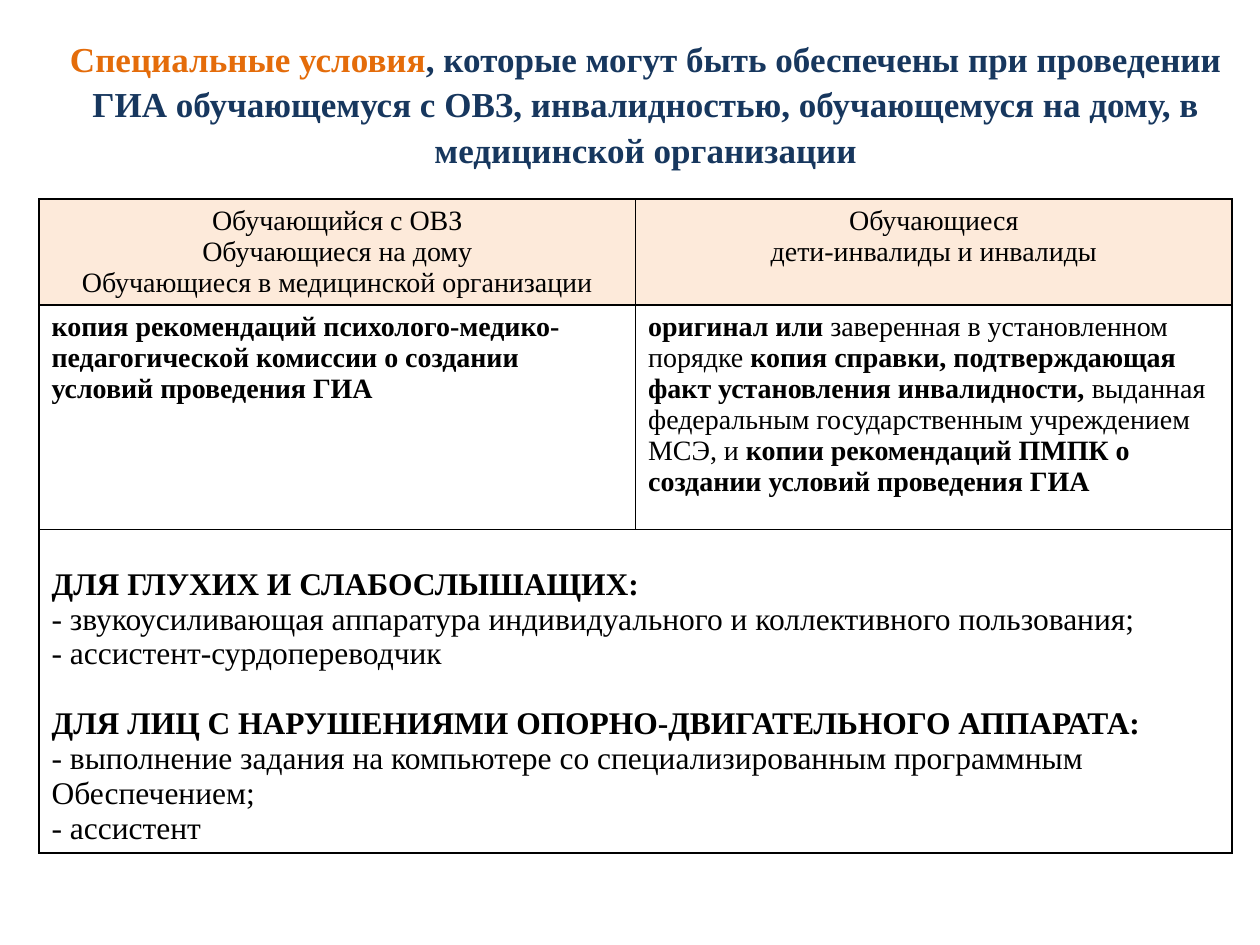
from lxml.etree import SubElement
from pptx import Presentation
from pptx.dml.color import RGBColor
from pptx.enum.text import MSO_ANCHOR, PP_ALIGN
from pptx.oxml.ns import qn
from pptx.util import Inches, Pt

FONT = "Times New Roman"
BLACK, ORANGE, NAVY, PEACH = "000000", "E46C0A", "17375E", "FDEADA"

# Content: a paragraph is a list of (text, bold) runs
TITLE = [
    ("Специальные условия", ORANGE),
    (", которые могут быть обеспечены при проведении ГИА обучающемуся с ОВЗ, "
     "инвалидностью, обучающемуся на дому, в медицинской организации", NAVY),
]
HEADERS = [
    ["Обучающийся с ОВЗ", "Обучающиеся на дому",
     "Обучающиеся в медицинской организации"],
    ["Обучающиеся", "дети-инвалиды и инвалиды"],
]
DOCUMENTS = [
    [("копия рекомендаций психолого-медико-педагогической комиссии "
      "о создании условий проведения ГИА", True)],
    [("оригинал или", True),
     (" заверенная в установленном порядке ", False),
     ("копия справки, подтверждающая факт установления инвалидности, ", True),
     ("выданная федеральным государственным учреждением МСЭ, и ", False),
     ("копии рекомендаций ПМПК о создании условий проведения ГИА", True)],
]
CONDITIONS = [
    ("ДЛЯ ГЛУХИХ И СЛАБОСЛЫШАЩИХ:",
     ["- звукоусиливающая аппаратура индивидуального и коллективного пользования;",
      "- ассистент-сурдопереводчик"]),
    ("ДЛЯ ЛИЦ С НАРУШЕНИЯМИ ОПОРНО-ДВИГАТЕЛЬНОГО АППАРАТА:",
     ["- выполнение задания на компьютере со специализированным программным",
      "Обеспечением;", "- ассистент"]),
]
TABLE_LEFT, TABLE_TOP, COL_WIDTH = 0.31, 1.58, 4.735
ROW_HEIGHTS = [0.84, 1.78, 2.57]


def rgb(value):
    return RGBColor.from_string(value)


def add_run(p, text, size, color=BLACK, bold=False):
    r = p.add_run()
    r.text = text
    for name, value in {"name": FONT, "size": Pt(size), "bold": bold}.items():
        setattr(r.font, name, value)
    r.font.color.rgb = rgb(color)


def fill_cell(cell, paragraphs, size, align=PP_ALIGN.LEFT):
    tf = cell.text_frame
    for i, runs in enumerate(paragraphs):
        p = tf.add_paragraph() if i else tf.paragraphs[0]
        p.alignment = align
        for text, bold in runs:
            add_run(p, text, size, bold=bold)


def style_cell(cell, fill=None):
    tcPr = cell._tc.get_or_add_tcPr()
    for side in ("a:lnL", "a:lnR", "a:lnT", "a:lnB"):
        ln = SubElement(tcPr, qn(side), w=str(Pt(1)))
        SubElement(SubElement(ln, qn("a:solidFill")), qn("a:srgbClr"), val=BLACK)
    if fill:
        cell.fill.solid()
        cell.fill.fore_color.rgb = rgb(fill)
    else:
        cell.fill.background()


prs = Presentation()
prs.slide_width, prs.slide_height = Inches(10), Inches(7.5)
s = prs.slides.add_slide(prs.slide_layouts[5])

# Title
title = s.shapes.title
box = {"left": 0.25, "top": 0.26, "width": 9.75, "height": 1.1}
for name, value in box.items():
    setattr(title, name, Inches(value))
tf = title.text_frame
tf.word_wrap, tf.vertical_anchor = True, MSO_ANCHOR.MIDDLE
p = tf.paragraphs[0]
for name, value in {"alignment": PP_ALIGN.CENTER, "line_spacing": 1.08,
                    "space_after": Pt(6)}.items():
    setattr(p, name, value)
for text, color in TITLE:
    add_run(p, text, 20, color, True)

# Table grid
table = s.shapes.add_table(
    len(ROW_HEIGHTS), len(HEADERS), Inches(TABLE_LEFT), Inches(TABLE_TOP),
    Inches(COL_WIDTH * len(HEADERS)), Inches(sum(ROW_HEIGHTS))).table
for col in table.columns:
    col.width = Inches(COL_WIDTH)
for i, height in enumerate(ROW_HEIGHTS):
    table.rows[i].height = Inches(height)
    for cell in table.rows[i].cells:
        style_cell(cell, None if i else PEACH)

# Header and document rows
for j, (lines, document) in enumerate(zip(HEADERS, DOCUMENTS)):
    fill_cell(table.cell(0, j), [[(t, False)] for t in lines], 16, PP_ALIGN.CENTER)
    fill_cell(table.cell(1, j), [document], 16)

# Conditions across both columns, each group set apart by spacing
cell = table.cell(2, 0)
cell.merge(table.cell(2, 1))
cell.margin_top = Inches(0.3)
groups = [[[(head, True)]] + [[(t, False)] for t in items]
          for head, items in CONDITIONS]
fill_cell(cell, sum(groups, []), 18)
cell.text_frame.paragraphs[len(groups[0])].space_before = Pt(20)

prs.save("out.pptx")
